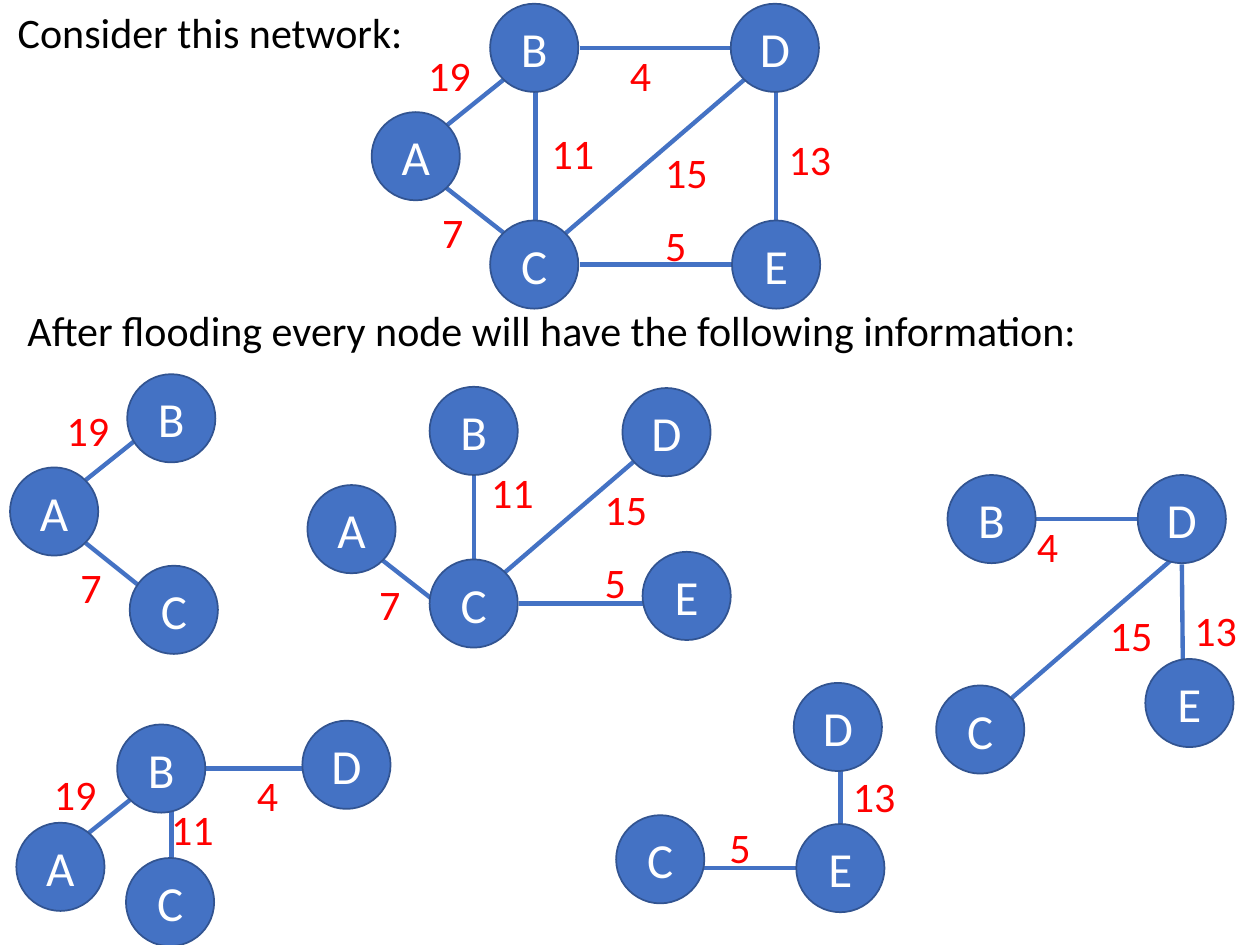
from lxml import etree
from pptx import Presentation
from pptx.dml.color import RGBColor
from pptx.enum.shapes import MSO_CONNECTOR, MSO_SHAPE
from pptx.enum.text import MSO_ANCHOR, MSO_AUTO_SIZE, PP_ALIGN
from pptx.oxml.ns import qn
from pptx.util import Inches, Pt

LINE, OVAL = MSO_CONNECTOR.STRAIGHT, MSO_SHAPE.OVAL
TOP, MID = MSO_ANCHOR.TOP, MSO_ANCHOR.MIDDLE
LEFT, MIDST = PP_ALIGN.LEFT, PP_ALIGN.CENTER
GROW, FIXED = MSO_AUTO_SIZE.SHAPE_TO_FIT_TEXT, MSO_AUTO_SIZE.NONE
HUES = {"node": "4472C4", "rim": "325491", "cost": "FF0000",
        "ink": "000000", "name": "FFFFFF"}
COLS, ROWS = 100, 75
WIDE, HIGH = Inches(10), Inches(7.5)
NODE, TALL = 7, 5

# Each graph: box corner, node corners, and edges as cost, line ends, label corner.
GRAPHS = [
    ((29.5, 0.3),
     {"A": (0, 8.6), "B": (9.4, 0), "D": (28.5, 0), "C": (9.4, 17.2), "E": (28.6, 17.2)},
     [(4, (16.5, 3.5), (28.5, 3.5), (19.5, 3.1)),
      (13, (32.1, 17.2), (32.1, 7), (32.1, 9.8)),
      (5, (28.6, 20.7), (16.5, 20.7), (22.3, 16.6)),
      (7, (10.5, 18.2), (5.9, 14.6), (4.6, 15.6)),
      (19, (5.9, 9.7), (10.5, 6), (3.5, 3.1)),
      (11, (13, 17.2), (13, 7), (13.3, 9.3)),
      (15, (15.4, 18.2), (29.6, 6), (22.3, 10.8))]),
    ((0.8, 29.7),
     {"A": (0, 7.4), "B": (9.3, 0), "C": (9.5, 15.2)},
     [(7, (10.5, 17), (6, 13.4), (4.6, 14.4)),
      (19, (6, 8.4), (10.5, 4.8), (3.5, 1.9))]),
    ((24.4, 30.7),
     {"A": (0, 7.8), "B": (9.7, 0), "D": (25, 0.1), "E": (26.6, 13.1), "C": (9.7, 13.7)},
     [(5, (28.9, 17.2), (16.8, 17.2), (22.6, 13)),
      (11, (13.2, 13.7), (13.2, 3.5), (13.6, 5.8)),
      (15, (15.7, 14.7), (29.9, 2.5), (22.6, 7.2)),
      (7, (10.6, 17.4), (6, 13.8), (4.7, 14.7))]),
    ((1.3, 57.2),
     {"B": (8, 0.3), "D": (22.7, 0), "A": (0, 8.1), "C": (8.7, 10.9)},
     [(4, (15, 3.8), (27.1, 3.8), (18.1, 3.4)),
      (19, (4.5, 9.9), (9, 6.3), (2, 3.3)),
      (11, (12.3, 12.3), (12.3, 6), (11.3, 6.1))]),
    ((74.3, 37.7),
     {"B": (0.9, 0), "D": (16, 0), "E": (16.6, 14.6), "C": (0, 16.7)},
     [(4, (3.9, 3.5), (16, 3.5), (7, 3.1)),
      (13, (19.6, 17.2), (19.5, 7.1), (19.5, 9.8)),
      (15, (6, 17.7), (20.1, 5.5), (12.8, 10.2))]),
    ((48.9, 54.2),
     {"D": (14.1, 0), "E": (14.3, 11.2), "C": (0, 10.5)},
     [(13, (17.8, 11.2), (17.8, 1), (17.8, 6.5)),
      (5, (14.3, 14.7), (2.2, 14.7), (8, 10.5))]),
]


def tint(key):
    """Return the named colour."""
    return RGBColor.from_string(HUES[key])


def spot(box, at):
    """Turn a grid offset inside a box into slide lengths."""
    return (round(WIDE * (box[0] + at[0]) / COLS),
            round(HIGH * (box[1] + at[1]) / ROWS))


def write(shape, text, size, hue, align=LEFT, anchor=TOP, fit=GROW):
    """Set and format the one line of text in a shape."""
    frame = shape.text_frame
    frame.text = text
    frame.word_wrap = True
    frame.auto_size = fit
    frame.vertical_anchor = anchor
    line = frame.paragraphs[0]
    line.alignment = align
    font = line.runs[0].font
    font.name, font.size, font.color.rgb = "Calibri", Pt(size), tint(hue)


def label(slide, box, at, wide, text, hue):
    """Add a text box at an offset inside a box."""
    shape = slide.shapes.add_textbox(*spot(box, at), *spot((0, 0), (wide, TALL)))
    write(shape, text, 24, hue)


def link(slide, box, start, end):
    """Draw an edge between two offsets inside a box."""
    line = slide.shapes.add_connector(LINE, *spot(box, start), *spot(box, end))
    line.line.color.rgb = tint("node")
    line.line.width = Pt(2.5)
    etree.SubElement(line._element.spPr, qn("a:effectLst"))


def node(slide, box, at, name):
    """Draw a named round node."""
    shape = slide.shapes.add_shape(OVAL, *spot(box, at), *spot((0, 0), (NODE, NODE)))
    shape.shadow.inherit = False
    shape.fill.solid()
    shape.fill.fore_color.rgb = tint("node")
    shape.line.color.rgb = tint("rim")
    shape.line.width = Pt(1)
    write(shape, name, 28, "name", MIDST, MID, FIXED)


def graph(slide, box, nodes, edges):
    """Draw edges, then nodes, then costs of one graph."""
    for _, start, end, _ in edges:
        link(slide, box, start, end)
    for name, at in nodes.items():
        node(slide, box, at, name)
    for cost, _, _, at in edges:
        label(slide, box, at, 5.8, str(cost), "cost")


def head(slide, box, text):
    """Place and format the title."""
    title = slide.shapes.title
    title.left, title.top = spot(box, (0, 0))
    title.width, title.height = spot((0, 0), (97.3, TALL))
    write(title, text, 24, "ink")


def main():
    """Build and save the slide."""
    deck = Presentation()
    deck.slide_width, deck.slide_height = WIDE, HIGH
    slide = deck.slides.add_slide(deck.slide_layouts[5])
    head(slide, (0.4, 0), "Consider this network:")
    for box, nodes, edges in GRAPHS:
        graph(slide, box, nodes, edges)
    label(slide, (1.2, 23.7), (0, 0), 97.3,
          "After flooding every node will have the following information:", "ink")
    deck.save("out.pptx")


if __name__ == "__main__":
    main()
